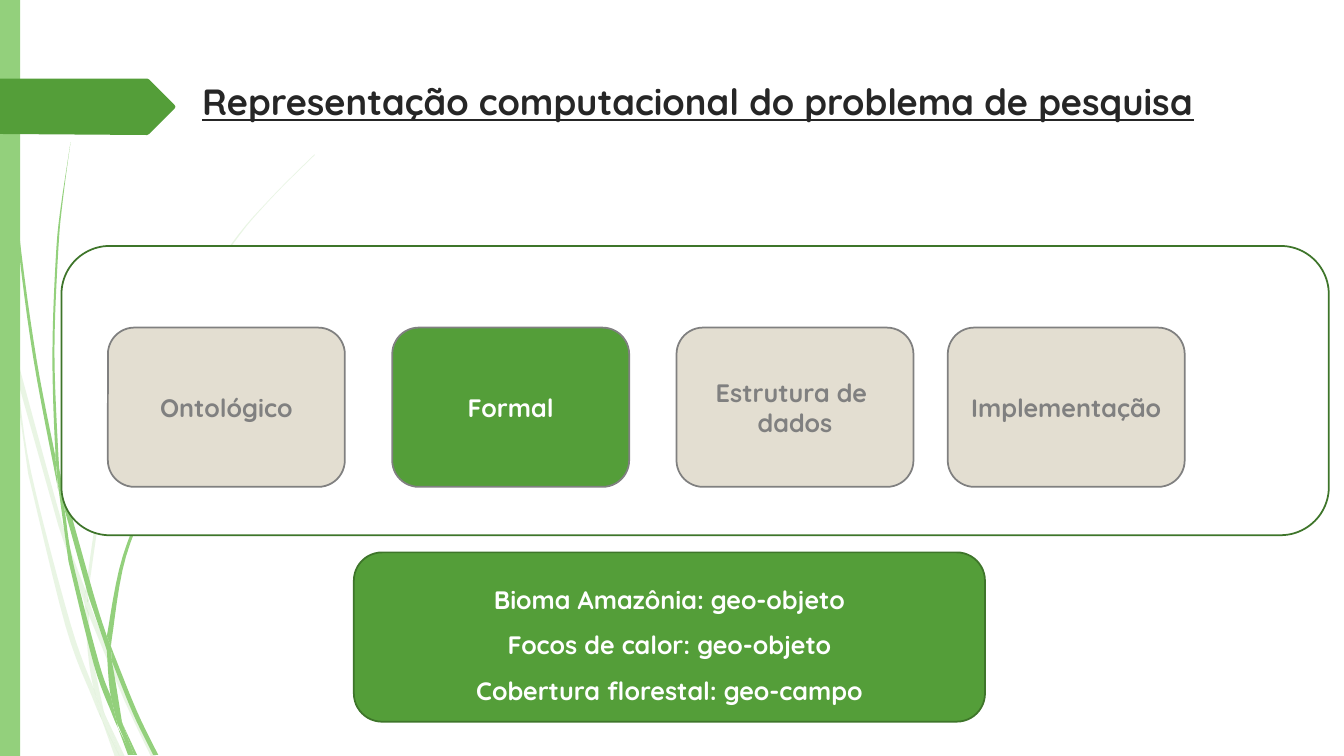
from dataclasses import dataclass

from lxml import etree
from pptx import Presentation
from pptx import util as u
from pptx.dml import color
from pptx.enum import shapes, text
from pptx.oxml import ns


@dataclass(frozen=True)
class Theme:
    font: str = "Quicksand"
    light_green: str = "93D07C"
    green: str = "549E39"
    dark_green: str = "3E752A"
    sand: str = "E3DED1"
    gray: str = "808080"
    ink: str = "262626"
    white: str = "FFFFFF"
    title_size: int = 26
    body_size: int = 18
    line_width: float = 1.25
    pale_alpha: int = 20


THEME = Theme()

PALE_WISPS = [
    ([(0.11, 3.5), (0.09, 3.22), (0, 2.82)], [(0, 2.99), (0.1, 3.44)]),
    ([(0.58, 5.22), (0.84, 5.99)], [(0.85, 5.86), (0.62, 5.2), (0.14, 3.45)],
     [(0.17, 3.76), (0.58, 5.22)]),
    ([(0.92, 6.07), (0.88, 5.96)], [(0.88, 6.1), (1.23, 6.94), (1.5, 7.51)],
     [(1.55, 7.51), (1.27, 6.92), (0.92, 6.07)]),
    ([(1.19, 7.51), (1.24, 7.51)], [(1.05, 7.11)]),
    ([(0.93, 6.83), (0.7, 6.19), (0.31, 4.69), (0.17, 3.76), (0.11, 3.5)],
     [(0.28, 4.7), (0.65, 6.21), (0.92, 6.93), (1.01, 7.14)], [(0.99, 7.07)]),
    ([(0.84, 5.99), (0.87, 6.46), (0.93, 6.83), (1.05, 7.11)],
     [(1.03, 7.06), (0.91, 6.46), (0.88, 6.08)]),
    ([(0.88, 5.96), (0.88, 5.84), (1.1, 4.62), (1.6, 3.49), (2.29, 2.45), (2.68, 1.98), (3.12, 1.54)],
     [(3.12, 1.53), (2.68, 1.97), (2.28, 2.44), (1.58, 3.48), (1.07, 4.61), (0.85, 5.84), (0.85, 5.86)]),
    ([(1.01, 7.14), (1.14, 7.51)], [(1.19, 7.51)]),
    ([(0.88, 6.1), (0.88, 5.96)], [(0.85, 5.86), (0.84, 5.99)]),
    ([(0.96, 6.92), (0.93, 6.83)], [(0.99, 7.07), (1.01, 7.14), (1.19, 7.51)], [(1.05, 7.11)]),
]

BRIGHT_WISPS = [
    ([(0.04, 0), (0.03, 0)], [(0.04, 0.48), (0.07, 1.1), (0.17, 2.33), (0.33, 3.55), (0.56, 4.77), (0.57, 4.81)],
     [(0.55, 4.53), (0.36, 3.55), (0.19, 2.32), (0.08, 1.09), (0.05, 0.48), (0.04, 0)]),
    ([(0.88, 5.92), (1.06, 6.45)], [(1.06, 6.31), (0.93, 5.9), (0.6, 4.72)], [(0.64, 5.05), (0.88, 5.92)]),
    ([(1.13, 6.49), (1.1, 6.41)], [(1.11, 6.56), (1.32, 7.08), (1.52, 7.49)],
     [(1.57, 7.49), (1.36, 7.06), (1.13, 6.49)]),
    ([(1.1, 6.91), (0.98, 6.57), (0.72, 5.56), (0.64, 5.05), (0.57, 4.77)],
     [(0.68, 5.57), (0.93, 6.59), (1.11, 7.08), (1.17, 7.22)], [(1.16, 7.17)]),
    ([(0.6, 4.72), (0.58, 4.53), (0.54, 3.49), (0.58, 2.45), (0.63, 1.93), (0.7, 1.41)],
     [(0.62, 1.93), (0.56, 2.45), (0.52, 3.49), (0.55, 4.49), (0.6, 4.72)]),
    ([(1.33, 7.49), (1.36, 7.49)], [(1.22, 7.19)]),
    ([(0.57, 4.77), (0.64, 5.05)], [(0.6, 4.72), (0.55, 4.49)], [(0.55, 4.53)]),
    ([(1.11, 6.33), (1.25, 5.52), (1.58, 4.76), (2.05, 4.06), (2.31, 3.74), (2.61, 3.44)],
     [(2.6, 3.44), (2.31, 3.73), (2.04, 4.05), (1.56, 4.74), (1.22, 5.51), (1.06, 6.31)], [(1.1, 6.41)]),
    ([(1.17, 7.22), (1.27, 7.49)], [(1.31, 7.49)]),
    ([(1.06, 6.45), (1.1, 6.91), (1.22, 7.19)], [(1.21, 7.16), (1.11, 6.56), (1.06, 6.45)]),
    ([(1.06, 6.45), (1.11, 6.56)], [(1.1, 6.41), (1.06, 6.31)]),
    ([(1.16, 7.06), (1.1, 6.91)], [(1.16, 7.17), (1.3, 7.49)], [(1.33, 7.49), (1.22, 7.19)]),
]

TITLE_ARROW = [(0, 0.78), (1.46, 0.78), (1.48, 0.79), (1.73, 1.04), (1.74, 1.06),
               (1.73, 1.08), (1.48, 1.33), (1.46, 1.34), (0, 1.33)]

STAGES = [(1.07, "Ontológico"), (3.89, "Formal"), (6.71, "Estrutura de \ndados"), (9.4, "Implementação")]
ACTIVE_STAGE = "Formal"
GEO_TYPES = "Bioma Amazônia: geo-objeto\nFocos de calor: geo-objeto\nCobertura florestal: geo-campo"


def rgb(value):
    return color.RGBColor.from_string(value)


def apply_format(target, values):
    for name, value in values.items():
        setattr(target, name, value)


def smooth(points, steps=6):
    padded = [points[0], *points, points[-1]]
    curve = [points[0]]
    for a, b, c, d in zip(padded, padded[1:], padded[2:], padded[3:]):
        for step in range(1, steps + 1):
            t = step / steps
            curve.append(tuple(
                q + t * ((r - p) + t * ((2 * p - 5 * q + 4 * r - s) + t * (3 * q - p - 3 * r + s))) / 2
                for p, q, r, s in zip(a, b, c, d)))
    return curve


def paint(shape, fill, line=None, alpha=None):
    shape.shadow.inherit = False
    shape.fill.solid()
    shape.fill.fore_color.rgb = rgb(fill)
    if alpha:
        tint = shape.fill._xPr.find(".//" + ns.qn("a:srgbClr"))
        etree.SubElement(tint, ns.qn("a:alpha"), val=str(alpha * 1000))
    if line:
        shape.line.color.rgb = rgb(line)
        shape.line.width = u.Pt(THEME.line_width)
    else:
        shape.line.fill.background()


def add_outline(slide, points, fill, alpha=None):
    corners = [(u.Inches(x), u.Inches(y)) for x, y in points]
    builder = slide.shapes.build_freeform(*corners[0], scale=1.0)
    builder.add_line_segments(corners[1:], close=True)
    paint(builder.convert_to_shape(), fill, alpha=alpha)


def add_wisps(slide, wisps, alpha=None):
    for edges in wisps:
        outline = [point for edge in edges for point in smooth(edge)]
        add_outline(slide, outline, THEME.light_green, alpha)


def add_box(slide, kind, bounds, fill, line=None):
    shape = slide.shapes.add_shape(kind, *map(u.Inches, bounds))
    paint(shape, fill, line)
    return shape


def write(shape, content, ink, size, anchor, spacing=None, underline=None):
    frame = shape.text_frame
    apply_format(frame, {"word_wrap": True, "vertical_anchor": anchor, "text": content})
    for paragraph in frame.paragraphs:
        apply_format(paragraph, {"alignment": text.PP_ALIGN.CENTER, "line_spacing": spacing})
        for run in paragraph.runs:
            apply_format(run.font, {"name": THEME.font, "size": u.Pt(size), "bold": True, "underline": underline})
            run.font.color.rgb = rgb(ink)


def add_stage(slide, left, label):
    fill, ink = (THEME.green, THEME.white) if label == ACTIVE_STAGE else (THEME.sand, THEME.gray)
    card = add_box(slide, shapes.MSO_SHAPE.ROUNDED_RECTANGLE, (left, 3.25, 2.35, 1.58), fill, THEME.gray)
    write(card, label, ink, THEME.body_size, text.MSO_ANCHOR.MIDDLE)


def main():
    presentation = Presentation()
    apply_format(presentation, {"slide_width": u.Inches(13.33), "slide_height": u.Inches(7.5)})
    slide = presentation.slides.add_slide(presentation.slide_layouts[6])
    rounded = shapes.MSO_SHAPE.ROUNDED_RECTANGLE

    add_wisps(slide, PALE_WISPS, THEME.pale_alpha)
    add_wisps(slide, BRIGHT_WISPS)
    add_box(slide, shapes.MSO_SHAPE.RECTANGLE, (0, 0, 0.2, 7.5), THEME.light_green)
    add_outline(slide, TITLE_ARROW, THEME.green)

    title = slide.shapes.add_textbox(*map(u.Inches, (1.69, 0.74, 10.47, 0.85)))
    write(title, "Representação computacional do problema de pesquisa",
          THEME.ink, THEME.title_size, text.MSO_ANCHOR.TOP, underline=True)

    add_box(slide, rounded, (0.61, 2.44, 12.57, 2.87), THEME.white, THEME.dark_green)
    for left, label in STAGES:
        add_stage(slide, left, label)

    summary = add_box(slide, rounded, (3.51, 5.48, 6.26, 1.68), THEME.green, THEME.dark_green)
    write(summary, GEO_TYPES, THEME.white, THEME.body_size, text.MSO_ANCHOR.MIDDLE, spacing=1.5)

    presentation.save("out.pptx")


if __name__ == "__main__":
    main()
